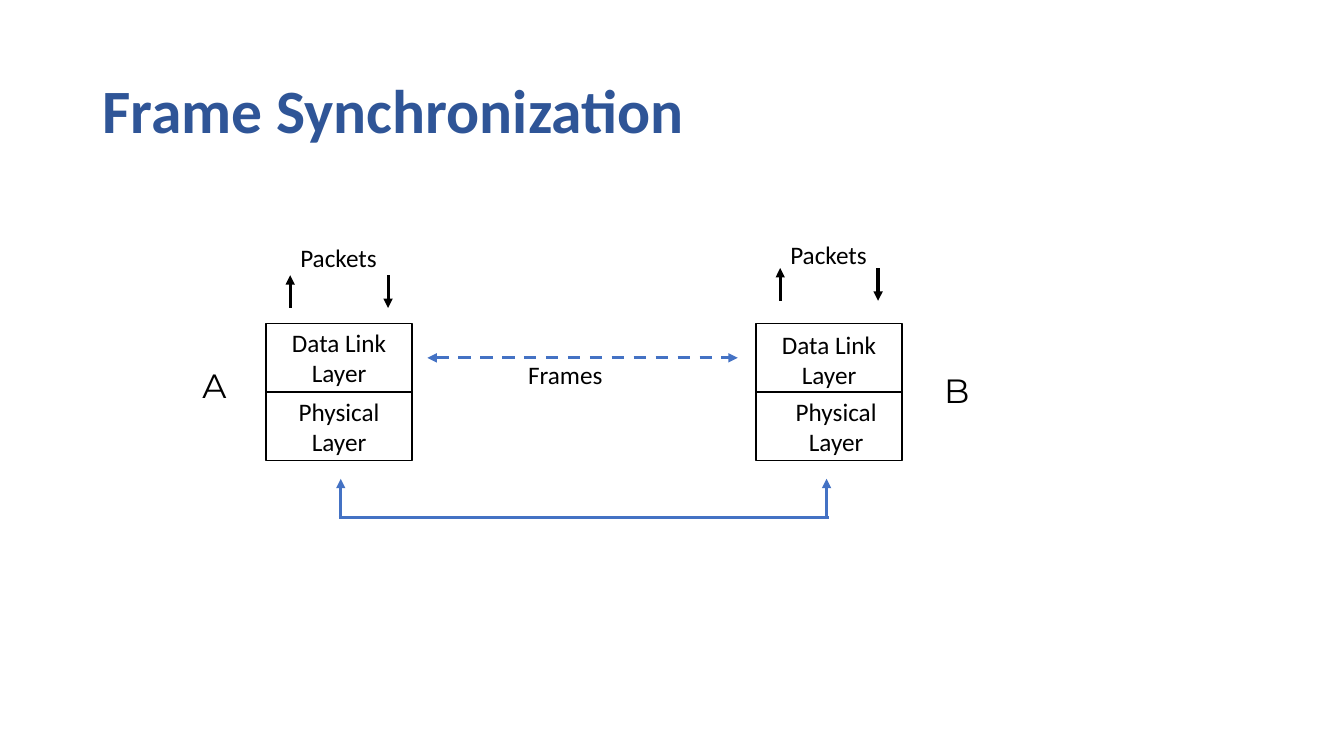
from lxml.etree import SubElement
from pptx import Presentation
from pptx.dml.color import RGBColor
from pptx.enum.dml import MSO_LINE_DASH_STYLE as DASH
from pptx.enum.shapes import MSO_CONNECTOR as CONN, MSO_SHAPE as SHAPE
from pptx.enum.text import MSO_ANCHOR as ANCHOR, MSO_AUTO_SIZE as FIT, PP_ALIGN as ALIGN
from pptx.oxml.ns import qn
from pptx.util import Pt

BLACK, BLUE, NAVY = "000000", "4472C4", "2F5597"


def write(tf, text, color=BLACK, align=ALIGN.LEFT, **font):
    p = tf.paragraphs[0]
    p.alignment = align
    r = p.add_run()
    r.text = text
    for name, value in ({"name": "Calibri", "size": Pt(18)} | font).items():
        setattr(r.font, name, value)
    r.font.color.rgb = RGBColor.from_string(color)
    return p


def add_line(x1, y1, x2, y2, color, ends=("tailEnd",), dash=None):
    c = s.shapes.add_connector(CONN.STRAIGHT, Pt(x1), Pt(y1), Pt(x2), Pt(y2))
    c.line.width = Pt(2.25)
    c.line.color.rgb = RGBColor.from_string(color)
    if dash:
        c.line.dash_style = dash
    for end in ends:
        SubElement(c.line._get_or_add_ln(), qn("a:" + end), type="triangle")
    SubElement(c._element.spPr, qn("a:effectLst"))


prs = Presentation()
prs.slide_width, prs.slide_height = Pt(960), Pt(540)
s = prs.slides.add_slide(prs.slide_layouts[5])

# Title
title = s.shapes.title
title.left, title.top, title.width, title.height = Pt(66), Pt(28.8), Pt(828), Pt(104.4)
tf = title.text_frame
tf.vertical_anchor = ANCHOR.MIDDLE
p = write(tf, "Frame Synchronization", NAVY, size=Pt(44), bold=True)
p.line_spacing = 0.9

# Layer stacks of both stations, with the packets passing above
BOX_W, BOX_H, STACK_TOP = 104.4, 49, 231
for left, arrow_top, nudges in ((190, 196.6, (0, 0)), (540, 191.5, (1, 10))):
    for i, layer in enumerate(("Data Link Layer", "Physical Layer")):
        sp = s.shapes.add_shape(SHAPE.RECTANGLE, Pt(left), Pt(STACK_TOP + i * BOX_H),
                                Pt(BOX_W), Pt(BOX_H))
        sp.shadow.inherit = False
        sp.fill.background()
        sp.line.color.rgb = RGBColor.from_string(BLACK)
        sp.line.width = Pt(1)
        tf = sp.text_frame
        margins = {"left": 7.2 + i * nudges[1], "right": 7.2,
                   "top": 2 * nudges[0] * (1 - i), "bottom": 0}
        for side, value in margins.items():
            setattr(tf, "margin_" + side, Pt(value))
        tf.word_wrap, tf.vertical_anchor = True, ANCHOR.MIDDLE
        write(tf, layer, align=ALIGN.CENTER)
    up, down, arrow_bottom = left + 17.3, left + 87.2, arrow_top + 23.4
    add_line(up, arrow_bottom, up, arrow_top, BLACK)
    add_line(down, arrow_top, down, arrow_bottom, BLACK)

# Physical link below the stacks
for x in (243.4, 590.4):
    add_line(x, 370, x, 342, BLUE)
add_line(242, 369.4, 592, 369.4, BLUE, ends=())

# Frame exchange between the data link layers
add_line(305.3, 255.6, 527, 255.6, BLUE, ("headEnd", "tailEnd"), DASH.DASH)

# Labels
station = {"name": "Montserrat", "size": Pt(24)}
for text, x, y, w, h, font in (
    ("Packets", 207.4, 169.6, 70, 29, {}),
    ("Packets", 557.4, 167.3, 70, 29, {}),
    ("Frames", 370.1, 252.9, 68.4, 29, {}),
    ("A", 137.5, 257, 33, 36, station),
    ("B", 667.4, 260.6, 33, 36, station),
):
    tf = s.shapes.add_textbox(Pt(x), Pt(y), Pt(w), Pt(h)).text_frame
    tf.word_wrap, tf.auto_size = False, FIT.SHAPE_TO_FIT_TEXT
    write(tf, text, **font)

prs.save("out.pptx")
